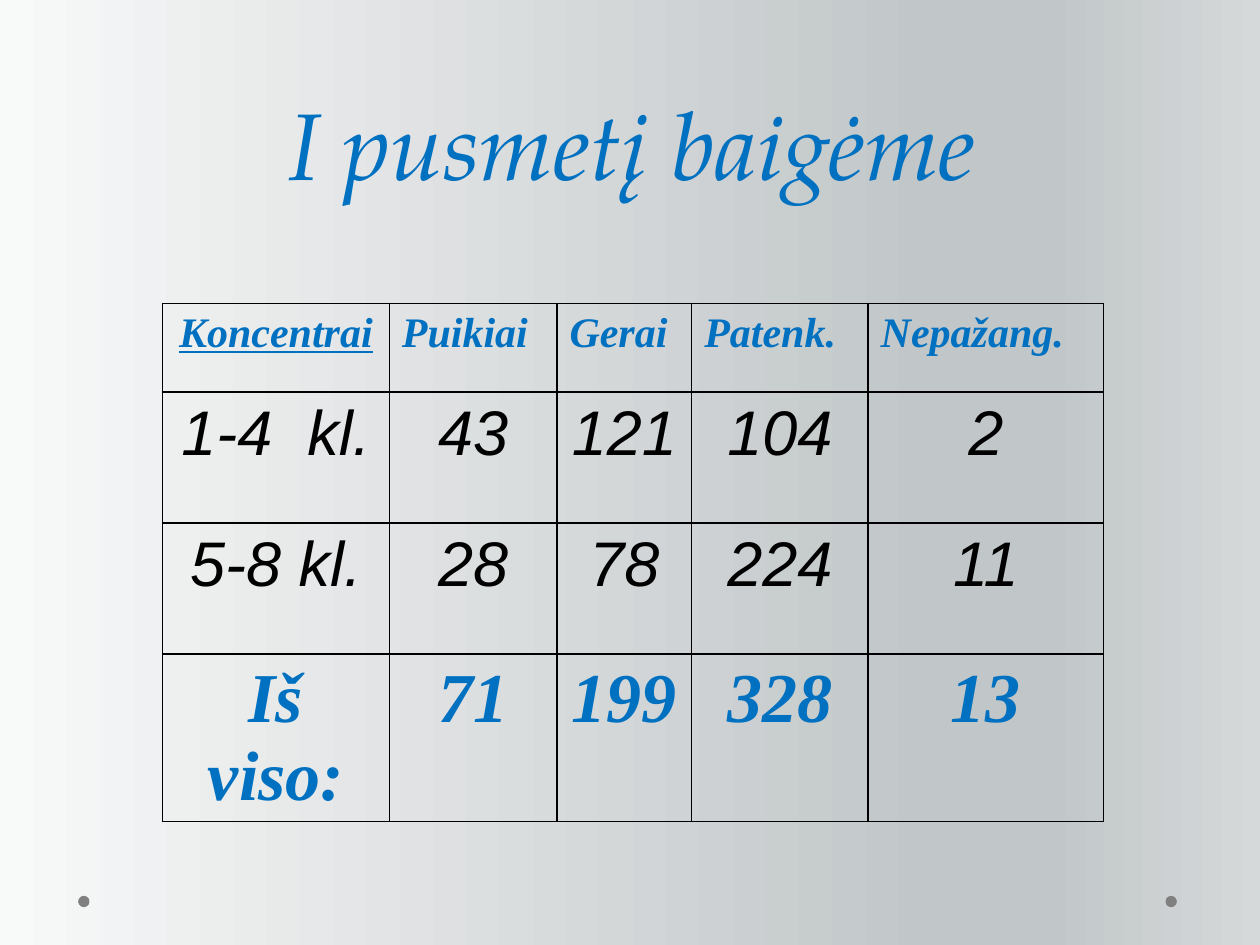
"""Build the half-year results slide: a title above a table of grades."""
from lxml import etree
from pptx import Presentation
from pptx.dml.color import RGBColor
from pptx.enum.shapes import MSO_SHAPE
from pptx.enum.text import MSO_ANCHOR, PP_ALIGN
from pptx.oxml.ns import qn
from pptx.util import Inches, Pt

OVAL = MSO_SHAPE.OVAL
LEFT, MID = PP_ALIGN.LEFT, PP_ALIGN.CENTER
BOTTOM = MSO_ANCHOR.BOTTOM

TITLE = "I pusmetį baigėme"
ROWS = [
    ("Koncentrai", "Puikiai", "Gerai", "Patenk.", "Nepažang."),
    ("1-4  kl.", "43", "121", "104", "2"),
    ("5-8 kl.", "28", "78", "224", "11"),
    ("Iš viso:", "71", "199", "328", "13"),
]

BLUE, BLACK = "0070C0", "000000"
SERIF = "Times New Roman"
THEME = {
    "back": [(0, "F8F9F9"), (74, "C1C6C8"), (83, "C1C6C8"), (100, "D6D9DA")],
    "dot": "808080",
    "rule": (BLACK, 1),
    "title": dict(font="TeX Gyre Pagella", size=54, color=BLUE, lead=58),
    "head": dict(font=SERIF, size=24, color=BLUE, bold=True),
    "body": dict(font="Arial", size=36, color=BLACK),
    "total": dict(font=SERIF, size=40, color=BLUE, bold=True),
}
STYLES = ["head", "body", "body", "total"]

WIDE, HIGH = 10, 7.5
COLS = [1.8, 1.33, 1.07, 1.4, 1.87]
TALL = [0.7, 1.04, 1.04, 1.33]
TABLE = (1.29, 2.41, sum(COLS), sum(TALL))
HEADING = (0.43, 0.76, 9.17, 0.87)
DOTS, DOT_TOP, DOT = (0.62, 9.25), 7.11, 0.09


def box(*sides):
    return [Inches(side) for side in sides]


def write(frame, text, font, size, color, bold=False, under=False,
          align=MID, lead=None):
    frame.word_wrap = True
    para = frame.paragraphs[0]
    para.alignment = align
    if lead:
        para.line_spacing = Pt(lead)
    run = para.add_run()
    run.text = text
    face = run.font
    face.name, face.size = font, Pt(size)
    face.bold, face.italic, face.underline = bold, True, under
    face.color.rgb = RGBColor.from_string(color)


def tint(parent, color):
    etree.SubElement(parent, qn("a:srgbClr"), val=color)


def paint(slide):
    fill = slide.background.fill
    fill.gradient()
    fill.gradient_angle = 0
    stops = next(slide.element.iter(qn("a:gsLst")))
    for old in list(stops):
        stops.remove(old)
    for share, color in THEME["back"]:
        stop = etree.SubElement(stops, qn("a:gs"), pos=str(share * 1000))
        tint(stop, color)


def frame_cell(cell):
    color, width = THEME["rule"]
    cell.fill.background()
    props = cell._tc.get_or_add_tcPr()
    for spot, side in enumerate(("lnL", "lnR", "lnT", "lnB")):
        line = etree.Element(qn("a:" + side), w=str(Pt(width)))
        tint(etree.SubElement(line, qn("a:solidFill")), color)
        props.insert(spot, line)


def add_grid(slide):
    grid = slide.shapes.add_table(len(ROWS), len(COLS), *box(*TABLE)).table
    grid.first_row = grid.horz_banding = False
    for col, width in zip(grid.columns, COLS):
        col.width = Inches(width)
    for r, (words, style) in enumerate(zip(ROWS, STYLES)):
        grid.rows[r].height = Inches(TALL[r])
        for c, word in enumerate(words):
            cell = grid.cell(r, c)
            head = style == "head"
            write(cell.text_frame, word, **THEME[style],
                  under=head and c == 0, align=LEFT if head and c else MID)
            frame_cell(cell)


def add_dot(slide, left):
    dot = slide.shapes.add_shape(OVAL, *box(left, DOT_TOP, DOT, DOT))
    dot.shadow.inherit = False
    dot.fill.solid()
    dot.fill.fore_color.rgb = RGBColor.from_string(THEME["dot"])
    dot.line.fill.background()


def main():
    deck = Presentation()
    deck.slide_width, deck.slide_height = box(WIDE, HIGH)
    slide = deck.slides.add_slide(deck.slide_layouts[6])
    paint(slide)
    for left in DOTS:
        add_dot(slide, left)
    add_grid(slide)
    title = slide.shapes.add_textbox(*box(*HEADING)).text_frame
    title.vertical_anchor = BOTTOM
    write(title, TITLE, **THEME["title"])
    deck.save("out.pptx")


if __name__ == "__main__":
    main()
